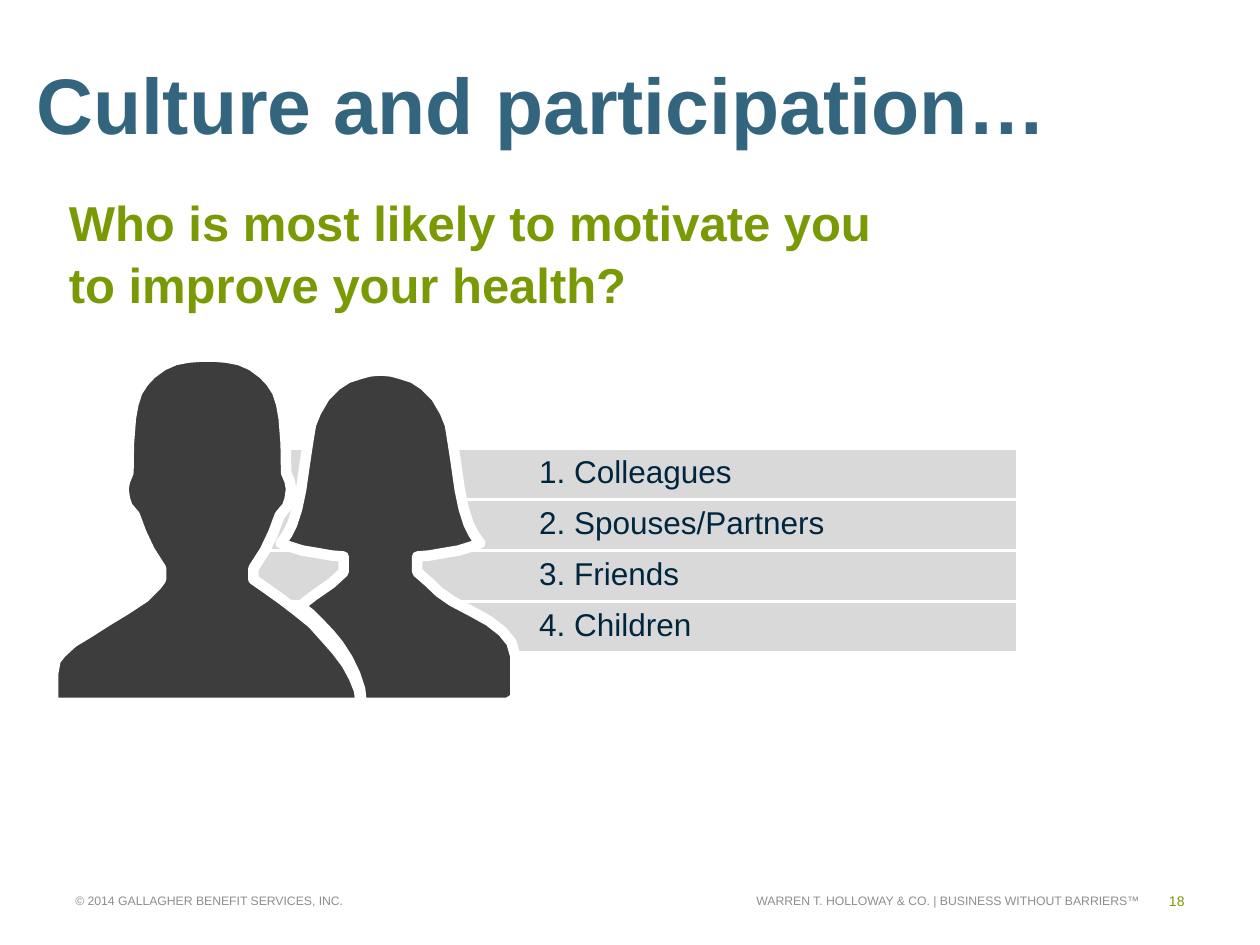
import pptx
import pptx.util
import pptx.oxml
import pptx.dml.color
import pptx.enum.text
from pptx.util import Cm, Pt

COLORS = {"blue": "34657F", "green": "799A05", "navy": "00263E", "gray": "8C8E92",
          "band": "D9D9D9", "figure": "3D3D3D", "white": "FFFFFF"}
ANCHOR = pptx.enum.text.MSO_ANCHOR
ALIGN = pptx.enum.text.PP_ALIGN

TITLE = "Culture and participation…"
QUESTION = "Who is most likely to motivate you to improve your health?"
ANSWERS = ["Colleagues", "Spouses/Partners", "Friends", "Children"]
COPYRIGHT = "© 2014 GALLAGHER BENEFIT SERVICES, INC."
TAGLINE = "WARREN T. HOLLOWAY & CO. | BUSINESS WITHOUT BARRIERS™"
PAGE = "18"

MAN = {
    "axis": 4.18,
    "half": [(0.14, 7.19), (0.39, 7.21), (0.65, 7.26), (0.9, 7.37), (1.13, 7.54),
             (1.28, 7.7), (1.41, 7.9), (1.49, 8.15), (1.54, 8.43), (1.58, 8.94),
             (1.59, 9.53), (1.66, 9.7), (1.69, 9.86), (1.66, 10.06), (1.61, 10.21),
             (1.46, 10.39), (1.33, 10.74), (1.16, 11.1), (0.93, 11.46), (0.93, 11.68)],
    "body": [(5.41, 11.89), (5.69, 12.09), (5.99, 12.32), (6.3, 12.57), (6.55, 12.85),
             (6.78, 13.11), (6.99, 13.39), (7.14, 13.67), (7.24, 13.92), (7.27, 14.17),
             (1.07, 14.17), (1.07, 13.59), (1.12, 13.31), (1.24, 13.16), (1.47, 12.95),
             (1.8, 12.75), (2.16, 12.52), (2.54, 12.29), (2.92, 12.04), (3.15, 11.81)],
}
WOMAN = {
    "axis": 7.67,
    "half": [(0.03, 7.47), (0.23, 7.49), (0.41, 7.54), (0.66, 7.62), (0.89, 7.77),
             (1.12, 8), (1.3, 8.31), (1.4, 8.56), (1.45, 8.86), (1.52, 9.32),
             (1.6, 9.88), (1.68, 10.26), (1.78, 10.57), (1.88, 10.77), (2.01, 10.95),
             (1.83, 11.02), (1.57, 11.1), (1.27, 11.15), (0.99, 11.2), (0.74, 11.22),
             (0.74, 11.53)],
    "body": [(8.64, 11.73), (8.86, 11.94), (9.12, 12.12), (9.5, 12.32), (9.86, 12.52),
             (10.13, 12.73), (10.31, 12.95), (10.39, 13.23), (10.39, 14.07), (10.24, 14.17),
             (7.29, 14.17), (7.26, 13.89), (7.16, 13.59), (7.01, 13.28), (6.83, 13),
             (6.65, 12.78), (6.45, 12.57), (6.25, 12.37), (6.05, 12.22), (6.32, 12.01),
             (6.68, 11.76)],
}


def rgb(name):
    return pptx.dml.color.RGBColor.from_string(COLORS[name])


def write(tf, text, size=18, color="navy", bold=False, align=ALIGN.LEFT,
          anchor=ANCHOR.TOP, spacing=None):
    tf.word_wrap = True
    tf.vertical_anchor = anchor
    p = tf.paragraphs[0]
    p.alignment = align
    p.line_spacing = spacing
    r = p.add_run()
    r.text = text
    r.font.name = "Arial"
    r.font.size = Pt(size)
    r.font.bold = bold
    r.font.color.rgb = rgb(color)


def add_text(slide, box, text, **fmt):
    sp = slide.shapes.add_textbox(*[Cm(v) for v in box])
    write(sp.text_frame, text, **fmt)


def add_border(cell, color, width):
    tc_pr = cell._tc.get_or_add_tcPr()
    for side in ("lnL", "lnR", "lnT", "lnB"):
        tc_pr.append(pptx.oxml.parse_xml(
            f'<a:{side} xmlns:a="http://schemas.openxmlformats.org/drawingml/2006/main" '
            f'w="{Pt(width)}"><a:solidFill><a:srgbClr val="{COLORS[color]}"/>'
            f'</a:solidFill></a:{side}>'))


def add_answers(slide, left, top, width, row_height, indent):
    frame = slide.shapes.add_table(len(ANSWERS), 1, Cm(left), Cm(top), Cm(width),
                                   Cm(row_height * len(ANSWERS)))
    table = frame.table
    table.first_row = table.horz_banding = False
    for i, answer in enumerate(ANSWERS):
        table.rows[i].height = Cm(row_height)
        cell = table.cell(i, 0)
        add_border(cell, "white", 2.25)
        cell.fill.solid()
        cell.fill.fore_color.rgb = rgb("band")
        cell.margin_left = Cm(indent)
        write(cell.text_frame, f"{i + 1}. {answer}")


def add_figure(slide, figure):
    axis, half = figure["axis"], figure["half"]
    right = [(axis + dx, y) for dx, y in half]
    left = [(axis - dx, y) for dx, y in reversed(half)]
    points = [(Cm(x), Cm(y)) for x, y in right + figure["body"] + left]
    builder = slide.shapes.build_freeform(*points[0])
    builder.add_line_segments(points[1:], close=True)
    sp = builder.convert_to_shape()
    sp.shadow.inherit = False
    sp.fill.solid()
    sp.fill.fore_color.rgb = rgb("figure")
    sp.line.color.rgb = rgb("white")
    sp.line.width = Pt(6)


def main():
    prs = pptx.Presentation()
    prs.slide_width, prs.slide_height = Cm(25.4), Cm(19.05)
    slide = prs.slides.add_slide(prs.slide_layouts[6])

    add_text(slide, (0.48, 0.36, 22.86, 2.79), TITLE, size=45, color="blue",
             bold=True, anchor=ANCHOR.BOTTOM)
    add_text(slide, (1.14, 3.7, 17.83, 2.64), QUESTION, size=28, color="green",
             bold=True, spacing=1.05)
    add_answers(slide, 4.24, 9.04, 16.28, 1.03, 6.63)
    for figure in (MAN, WOMAN):
        add_figure(slide, figure)

    footer = [
        (1.27, 11.51, COPYRIGHT, 7, "gray", ALIGN.LEFT),
        (12.78, 10.44, TAGLINE, 7, "gray", ALIGN.RIGHT),
        (23.24, 0.89, PAGE, 8, "green", ALIGN.RIGHT),
    ]
    for left, width, text, size, color, align in footer:
        add_text(slide, (left, 17.65, width, 1.02), text, size=size, color=color,
                 align=align, anchor=ANCHOR.MIDDLE)
    prs.save("out.pptx")


if __name__ == "__main__":
    main()
